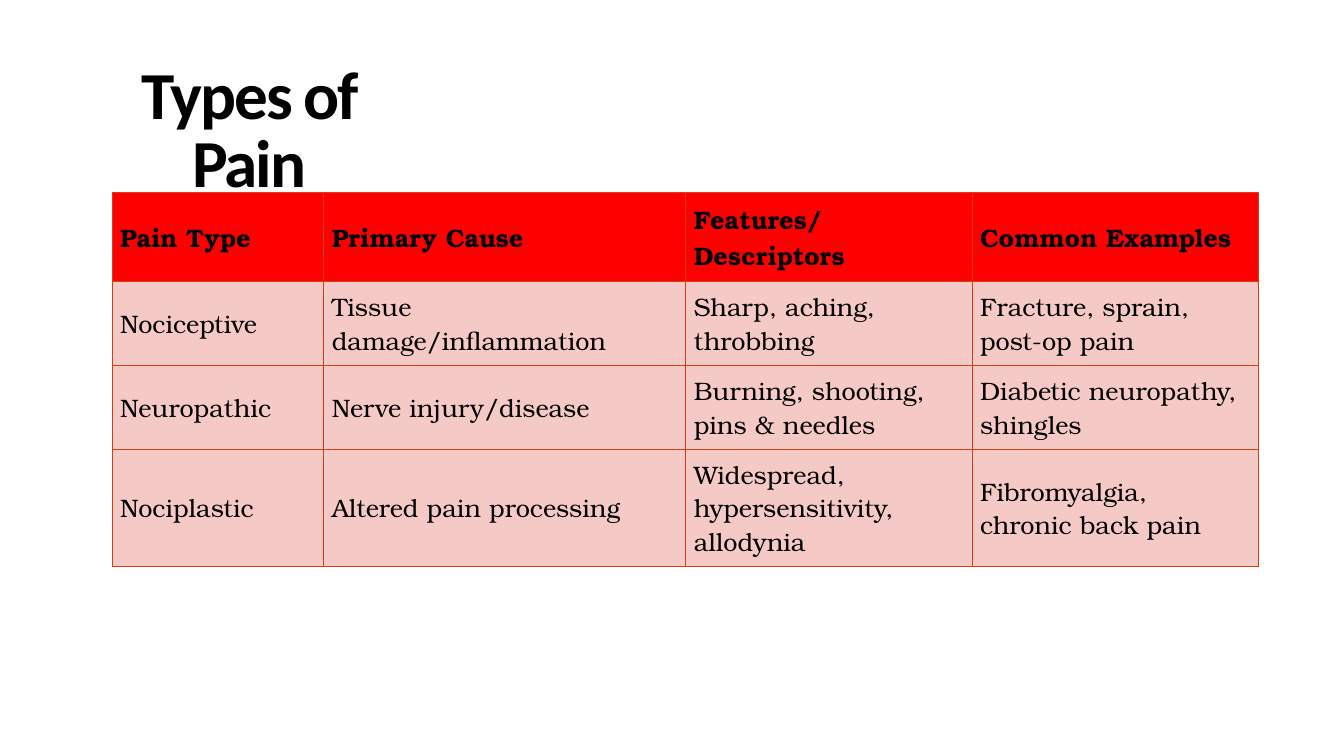
from dataclasses import dataclass

from pptx import Presentation
from pptx.dml.color import RGBColor
from pptx.enum.text import MSO_ANCHOR, MSO_AUTO_SIZE, PP_ALIGN
from pptx.oxml import parse_xml
from pptx.oxml.ns import nsdecls
from pptx.util import Inches, Pt


@dataclass(frozen=True)
class Theme:
    ink: str = "000000"
    header_fill: str = "FF0000"
    body_fill: str = "F5C9C6"
    border: str = "D63E15"
    border_width: float = 0.75
    title_font: str = "Calibri"
    title_size: int = 48
    table_font: str = "TeX Gyre Bonum"
    table_size: int = 18
    title_inset: float = 0.25
    cell_inset: float = 0.08


THEME = Theme()
SLIDE_WIDTH, SLIDE_HEIGHT = 13.33, 7.5
COLUMN_WIDTHS = (2.1, 3.59, 2.84, 2.84)
LINE_HEIGHT = 0.335
HEADER_HEIGHT = 0.89
LINES_PER_ROW = (2, 2, 3)

PAIN_TYPES = (
    ("Pain Type", "Primary Cause", "Features/Descriptors", "Common Examples"),
    ("Nociceptive", "Tissue damage/inflammation", "Sharp, aching, throbbing",
     "Fracture, sprain,\npost-op pain"),
    ("Neuropathic", "Nerve injury/disease", "Burning, shooting,\npins & needles",
     "Diabetic neuropathy, shingles"),
    ("Nociplastic", "Altered pain processing",
     "Widespread, hypersensitivity, allodynia",
     "Fibromyalgia,\nchronic back pain"),
)


def style_font(font, name, size, bold):
    font.name, font.size, font.bold = name, Pt(size), bold
    font.color.rgb = RGBColor.from_string(THEME.ink)


def set_insets(holder, inset):
    holder.margin_left = holder.margin_right = Inches(inset)
    holder.margin_top = holder.margin_bottom = Inches(inset)


def add_title(slide, text):
    title = slide.shapes.title
    title.left, title.top = Inches(0.042 * SLIDE_WIDTH), Inches(0.124 * SLIDE_HEIGHT)
    title.width, title.height = Inches(0.287 * SLIDE_WIDTH), Inches(0.104 * SLIDE_HEIGHT)
    frame = title.text_frame
    frame.word_wrap, frame.auto_size = True, MSO_AUTO_SIZE.NONE
    frame.vertical_anchor = MSO_ANCHOR.MIDDLE
    set_insets(frame, THEME.title_inset)
    heading = frame.paragraphs[0]
    heading.text = text
    heading.alignment, heading.line_spacing = PP_ALIGN.CENTER, 0.85
    style_font(heading.font, THEME.title_font, THEME.title_size, True)
    heading.runs[0].font._element.set("spc", "-150")


def add_borders(cell):
    """Draw all four sides; border elements must precede the cell's fill."""
    properties = cell._tc.get_or_add_tcPr()
    for position, side in enumerate(("lnL", "lnR", "lnT", "lnB")):
        properties.insert(position, parse_xml(
            f'<a:{side} {nsdecls("a")} w="{Pt(THEME.border_width)}"><a:solidFill>'
            f'<a:srgbClr val="{THEME.border}"/></a:solidFill></a:{side}>'))


def fill_cell(cell, text, is_header):
    cell.vertical_anchor = MSO_ANCHOR.MIDDLE
    set_insets(cell, THEME.cell_inset)
    cell.fill.solid()
    cell.fill.fore_color.rgb = RGBColor.from_string(
        THEME.header_fill if is_header else THEME.body_fill)
    entry = cell.text_frame.paragraphs[0]
    entry.text = text
    style_font(entry.font, THEME.table_font, THEME.table_size, is_header)
    add_borders(cell)


def add_pain_table(slide, rows):
    heights = [HEADER_HEIGHT] + [
        lines * LINE_HEIGHT + 2 * THEME.cell_inset for lines in LINES_PER_ROW]
    table = slide.shapes.add_table(
        len(rows), len(COLUMN_WIDTHS),
        Inches(SLIDE_WIDTH / 12), Inches(0.254 * SLIDE_HEIGHT),
        Inches(sum(COLUMN_WIDTHS)), Inches(sum(heights))).table
    for column, width in zip(table.columns, COLUMN_WIDTHS):
        column.width = Inches(width)
    for index, (row, height, texts) in enumerate(zip(table.rows, heights, rows)):
        row.height = Inches(height)
        for cell, text in zip(row.cells, texts):
            fill_cell(cell, text, is_header=index == 0)


def main():
    deck = Presentation()
    deck.slide_width, deck.slide_height = Inches(SLIDE_WIDTH), Inches(SLIDE_HEIGHT)
    slide = deck.slides.add_slide(deck.slide_layouts[5])
    add_title(slide, "Types of Pain")
    add_pain_table(slide, PAIN_TYPES)
    deck.save("out.pptx")


if __name__ == "__main__":
    main()
